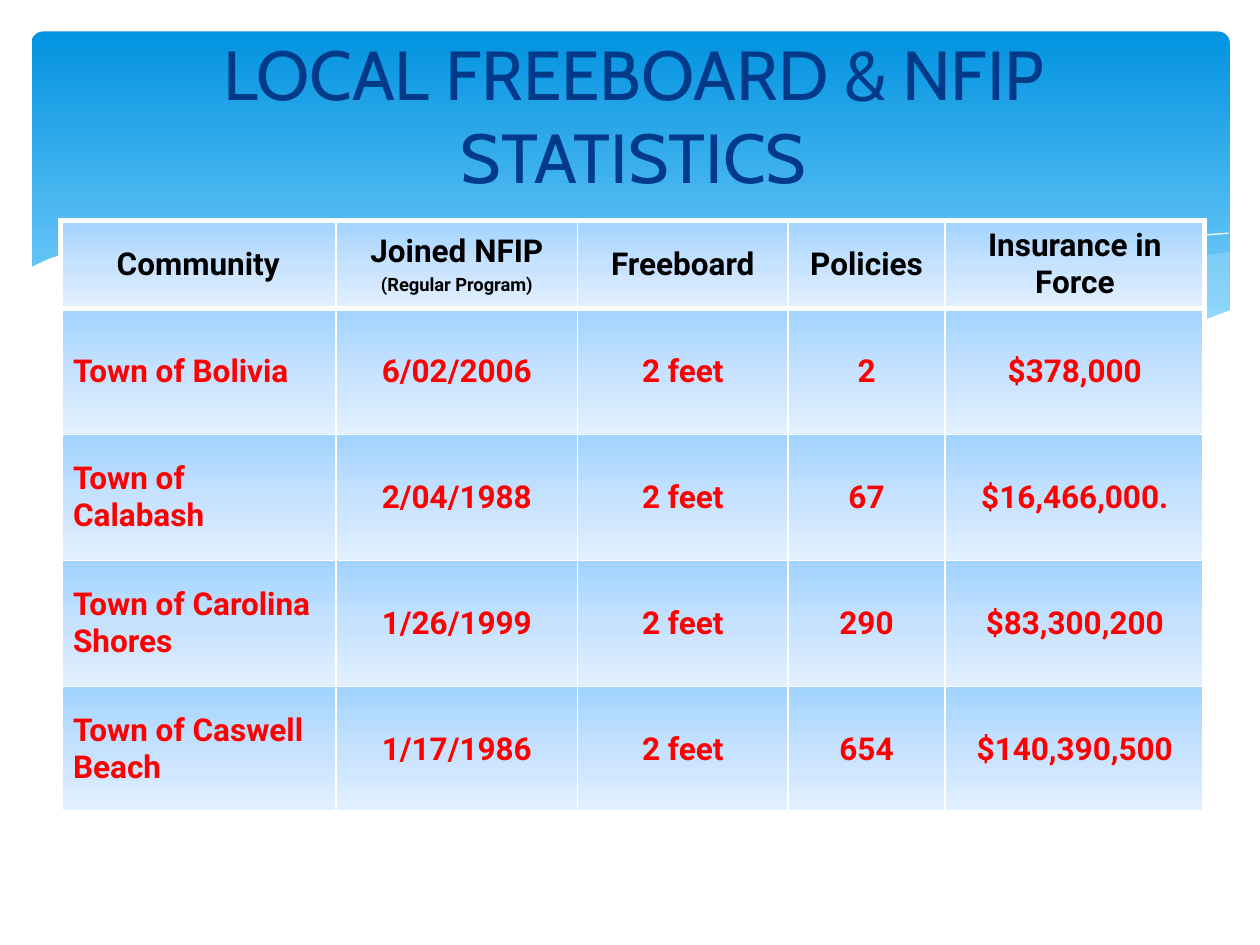
import pptx
import pptx.dml.color
import pptx.enum.shapes
import pptx.enum.text
import pptx.oxml
import pptx.oxml.ns
import pptx.util

COLORS = {
    "white": "FFFFFF", "mist": "C6E7FC", "title": "003A88", "head": "000000", "body": "FF0000",
    "sky_top": "0293E0", "sky_low": "83D3FE",
    "cell_top": "A1D3FF", "cell_mid": "C6E2FF", "cell_low": "E3F0FF",
}
COLS, ROWS = 10, 7.5
PP_ALIGN = pptx.enum.text.PP_ALIGN
MIDDLE = pptx.enum.text.MSO_ANCHOR.MIDDLE

RIGHT_RIPPLE = [
    (975, 200), (948, 204), (921, 210), (891, 216), (861, 223), (805, 237), (753, 248),
    (706, 257), (661, 265), (691, 269), (732, 274), (769, 277), (814, 278), (854, 276),
    (889, 272), (921, 265), (949, 257), (976, 247), (976, 200),
]
LONG_RIPPLE = [
    (893, 273), (837, 265), (775, 254), (706, 240), (629, 222), (584, 211), (541, 203),
    (502, 196), (465, 191), (420, 187), (380, 185), (344, 186), (313, 188), (286, 191),
    (342, 199), (404, 211), (449, 222), (530, 240), (601, 255), (665, 266), (722, 274),
    (773, 277), (818, 278), (857, 277),
]
FALLING_LINE = [
    (309, 195), (335, 191), (374, 188), (416, 187), (469, 189), (533, 194), (582, 200),
    (636, 208), (695, 219), (760, 233), (831, 251), (907, 272),
]
RISING_LINE = [
    (613, 257), (653, 246), (695, 235), (748, 223), (806, 210), (866, 199), (910, 192),
    (951, 187), (975, 185),
]
WHITE_WAVE = [
    (977, 246), (950, 256), (920, 265), (887, 271), (850, 275), (809, 277), (761, 275),
    (708, 270), (648, 262), (579, 250), (503, 233), (447, 220), (391, 207), (340, 197),
    (292, 190), (250, 186), (211, 184), (161, 184), (119, 187), (85, 193), (59, 199),
    (40, 205), (29, 210), (23, 213), (23, 329), (977, 329),
]
WAVES = [
    (RIGHT_RIPPLE, "mist", 29, True),
    (LONG_RIPPLE, "mist", 40, True),
    (FALLING_LINE, "white", 100, False),
    (RISING_LINE, "white", 100, False),
    (WHITE_WAVE, "white", 100, True),
]
HEADERS = ["Community", "Joined NFIP\n(Regular Program)", "Freeboard", "Policies", "Insurance in Force"]
TOWNS = [
    ["Town of Bolivia", "6/02/2006", "2 feet", "2", "$378,000"],
    ["Town of Calabash", "2/04/1988", "2 feet", "67", "$16,466,000."],
    ["Town of Carolina Shores", "1/26/1999", "2 feet", "290", "$83,300,200"],
    ["Town of Caswell Beach", "1/17/1986", "2 feet", "654", "$140,390,500"],
]


def rgb(name):
    """Return the named colour."""
    return pptx.dml.color.RGBColor.from_string(COLORS[name])


def make(tag, parent, **attrs):
    """Append a DrawingML element to its parent."""
    el = pptx.oxml.parse_xml(f"<a:{tag} {pptx.oxml.ns.nsdecls('a')}/>")
    for key, value in attrs.items():
        el.set(key, str(value))
    parent.append(el)
    return el


def gradient(parent, stops):
    """Append a top-to-bottom gradient made of (percent, colour) stops."""
    grad = make("gradFill", parent, rotWithShape=1)
    stop_list = make("gsLst", grad)
    for percent, name in stops:
        make("srgbClr", make("gs", stop_list, pos=percent * 1000), val=COLORS[name])
    make("lin", grad, ang=5400000, scaled=0)


def write(tf, text, sizes, font, color, align, bold=False, before=0):
    """Write one paragraph per line of text in the given format."""
    tf.word_wrap = True
    for i, (line, size) in enumerate(zip(text.split("\n"), sizes)):
        p = tf.paragraphs[0] if i == 0 else tf.add_paragraph()
        p.alignment = align
        p.space_before = pptx.util.Pt(before * size)
        r = p.add_run()
        r.text = line
        r.font.size, r.font.name, r.font.bold = pptx.util.Pt(size), font, bold
        r.font.color.rgb = rgb(color)


def add_sky(slide, box):
    """Draw the rounded gradient panel."""
    sp = slide.shapes.add_shape(pptx.enum.shapes.MSO_SHAPE.ROUNDED_RECTANGLE, *box)
    sp.shadow.inherit = False
    sp.adjustments[0] = 0.034
    sp.line.fill.background()
    holder = make("spPr", make("sp", pptx.oxml.parse_xml(f"<a:sp {pptx.oxml.ns.nsdecls('a')}/>")))
    gradient(holder, [(0, "sky_top"), (90, "sky_low")])
    props = sp._element.spPr
    props.insert(list(props).index(props.find(pptx.oxml.ns.qn("a:prstGeom"))) + 1, holder[0])


def add_waves(slide, unit):
    """Draw the waves, whose points are hundredths of a grid unit."""
    for points, color, alpha, filled in WAVES:
        builder = slide.shapes.build_freeform(*points[0], scale=unit / 100)
        builder.add_line_segments(points[1:], close=filled)
        sp = builder.convert_to_shape()
        sp.shadow.inherit = False
        if filled:
            sp.line.fill.background()
            sp.fill.solid()
            sp.fill.fore_color.rgb = rgb(color)
            clr = sp._element.spPr.find(".//" + pptx.oxml.ns.qn("a:srgbClr"))
            make("alpha", clr, val=alpha * 1000)
        else:
            sp.fill.background()
            sp.line.color.rgb = rgb(color)
            sp.line.width = 0


def add_title(slide, box, text):
    """Place the centred title."""
    tf = slide.shapes.add_textbox(*box).text_frame
    tf.vertical_anchor = MIDDLE
    write(tf, text, [39.6], "Cabin", "title", PP_ALIGN.CENTER)
    tf.paragraphs[0]._p.get_or_add_pPr().set("marL", str(pptx.util.Inches(0.06)))


def style_cell(cell, thick):
    """Give a cell white borders, thick on the named sides, and a gradient."""
    props = cell._tc.get_or_add_tcPr()
    for side in "LRTB":
        ln = make(f"ln{side}", props, w=pptx.util.Pt(3 if side in thick else 1))
        make("srgbClr", make("solidFill", ln), val=COLORS["white"])
    gradient(props, [(0, "cell_top"), (50, "cell_mid"), (100, "cell_low")])


def add_statistics(slide, box, widths, heights, rows):
    """Fill the table, with a thick frame and a thick rule under the header."""
    table = slide.shapes.add_table(len(rows), len(widths), *box).table
    table.first_row = table.horz_banding = False
    for col, share in zip(table.columns, widths):
        col.width = int(box[2] * share / sum(widths))
    for row, share in zip(table.rows, heights):
        row.height = int(box[3] * share / sum(heights))
    last_row, last_col = len(rows) - 1, len(widths) - 1
    for i, row in enumerate(rows):
        for j, text in enumerate(row):
            cell = table.cell(i, j)
            cell.vertical_anchor = MIDDLE
            align = PP_ALIGN.LEFT if i and j == 0 else PP_ALIGN.CENTER
            write(cell.text_frame, text, [18, 10.5], "Roboto", "body" if i else "head",
                  align, bold=True, before=0.2)
            edges = {"L": j == 0, "R": j == last_col, "T": i < 2, "B": i in (0, last_row)}
            style_cell(cell, [side for side, on in edges.items() if on])


def main():
    """Build the slide and save it."""
    prs = pptx.Presentation()
    unit = pptx.util.Inches(1)
    prs.slide_width, prs.slide_height = int(COLS * unit), int(ROWS * unit)
    slide = prs.slides.add_slide(prs.slide_layouts[6])

    def grid(*cells):
        """Turn grid columns and rows into lengths."""
        return [int(c * unit) for c in cells]

    add_sky(slide, grid(0.25, 0.25, 9.51, 2.7))
    add_waves(slide, unit)
    add_title(slide, grid(0.5, 0.28, 9, 1.25), "LOCAL FREEBOARD & NFIP STATISTICS")
    add_statistics(slide, grid(0.48, 1.75, 9.08, 4.67), [2.19, 1.92, 1.67, 1.25, 2.06],
                   [0.67, 1, 1, 1, 1], [HEADERS] + TOWNS)
    prs.save("out.pptx")


if __name__ == "__main__":
    main()
